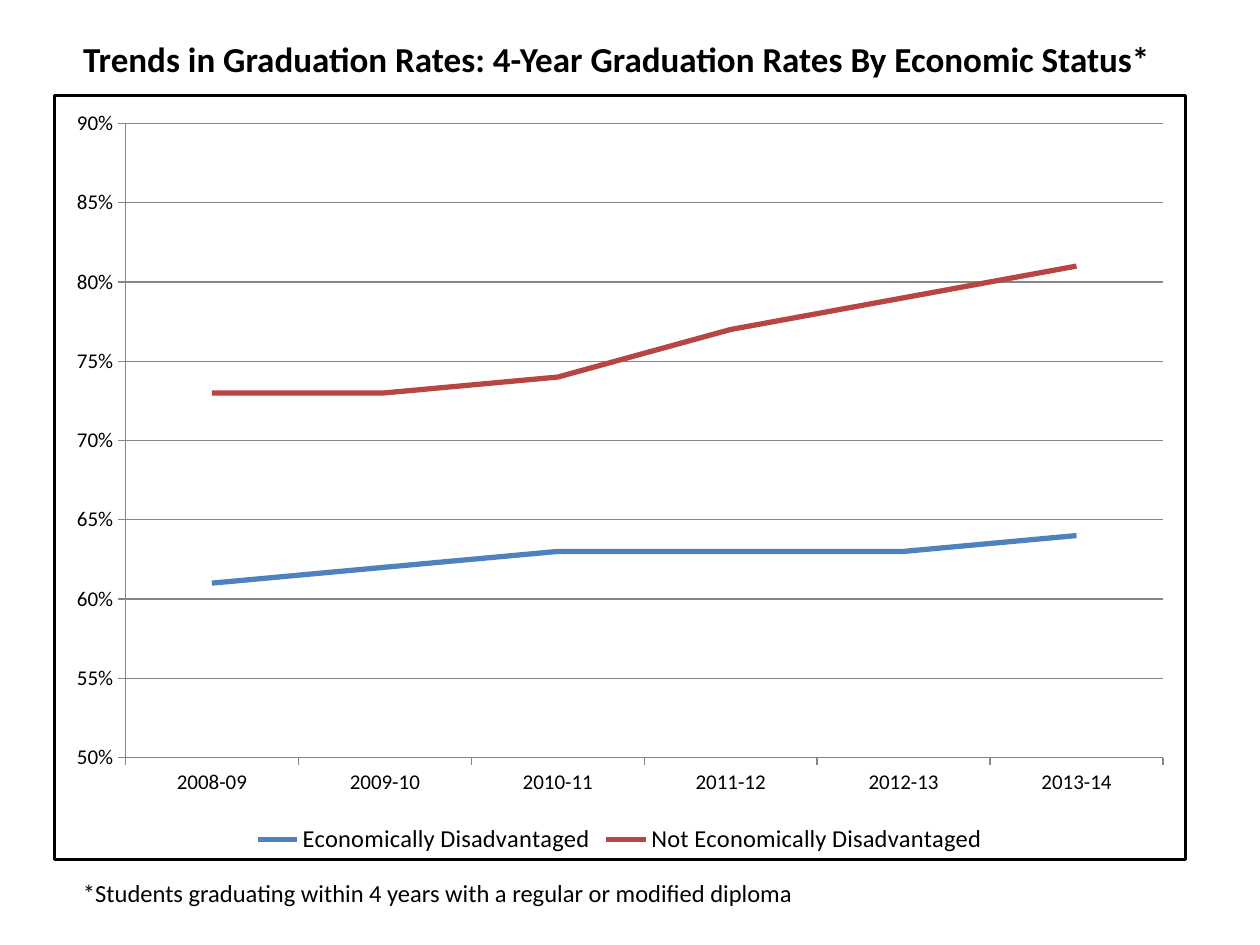
from lxml import etree
from pptx import Presentation
from pptx.chart.data import CategoryChartData
from pptx.dml.color import RGBColor
from pptx.enum.chart import XL_CHART_TYPE as CT, XL_LEGEND_POSITION as LP, XL_TICK_MARK as TM
from pptx.enum.text import MSO_ANCHOR, PP_ALIGN
from pptx.oxml import parse_xml
from pptx.oxml.ns import nsdecls, qn
from pptx.util import Inches, Pt

FONT, BLACK, GREY = "Calibri", "000000", "868686"
TITLE = "Trends in Graduation Rates: 4-Year Graduation Rates By Economic Status*"
FOOTNOTE = "*Students graduating within 4 years with a regular or modified diploma"
YEARS = ["2008-09", "2009-10", "2010-11", "2011-12", "2012-13", "2013-14"]
SERIES = [
    ("Economically Disadvantaged", "4F81BD", (0.61, 0.62, 0.63, 0.63, 0.63, 0.64)),
    ("Not Economically Disadvantaged", "B84542", (0.73, 0.73, 0.74, 0.77, 0.79, 0.81)),
]
TITLE_BOX = (0.56, 0.25, 8.94, 0.44)
CHART_BOX = (0.42, 0.75, 9, 6.08)
NOTE_BOX = (0.56, 6.92, 5.89, 0.34)


def rgb(value):
    """Turn a hex string into a colour."""
    return RGBColor.from_string(value)


def box(values):
    """Turn a box in inches into lengths."""
    return [Inches(v) for v in values]


def style_font(font, size, bold=False):
    """Apply the slide's typeface in black."""
    font.name, font.size, font.bold = FONT, Pt(size), bold
    font.color.rgb = rgb(BLACK)


def style_line(line, color, width):
    """Set a line's colour and width in points."""
    line.color.rgb, line.width = rgb(color), Pt(width)


def write(sp, text, size, bold=False, wrap=True):
    """Fill a shape with one left-aligned paragraph."""
    tf = sp.text_frame
    tf.text, tf.word_wrap, tf.vertical_anchor = text, wrap, MSO_ANCHOR.TOP
    p = tf.paragraphs[0]
    p.alignment = PP_ALIGN.LEFT
    style_font(p.runs[0].font, size, bold)


def add_border(chart, color, width):
    """Outline the whole chart area."""
    sp_pr = parse_xml(f'<c:spPr {nsdecls("c", "a")}/>')
    ln = etree.SubElement(sp_pr, qn("a:ln"), w=str(Pt(width)))
    fill = etree.SubElement(ln, qn("a:solidFill"))
    etree.SubElement(fill, qn("a:srgbClr"), val=color)
    chart.element.find(qn("c:chart")).addnext(sp_pr)


def add_rates(s):
    """Add the line chart of graduation rates."""
    data = CategoryChartData(number_format="0%")
    data.categories = YEARS
    for name, _, rates in SERIES:
        data.add_series(name, rates)
    chart = s.shapes.add_chart(CT.LINE, *box(CHART_BOX), data).chart
    style_font(chart.font, 10)
    chart.has_title = False
    chart.has_legend = True
    chart.legend.position, chart.legend.include_in_layout = LP.BOTTOM, False
    style_font(chart.legend.font, 14)
    for axis in (chart.category_axis, chart.value_axis):
        axis.major_tick_mark, axis.minor_tick_mark = TM.OUTSIDE, TM.NONE
        style_font(axis.tick_labels.font, 12)
        style_line(axis.format.line, GREY, 0.75)
    axis = chart.value_axis
    axis.minimum_scale, axis.maximum_scale, axis.major_unit = 0.5, 0.9, 0.05
    axis.tick_labels.number_format = "0%"
    axis.tick_labels.number_format_is_linked = False
    axis.has_major_gridlines = True
    style_line(axis.major_gridlines.format.line, GREY, 0.75)
    chart.plots[0].vary_by_categories = False
    for series, (_, color, _) in zip(chart.plots[0].series, SERIES):
        series.smooth = False
        style_line(series.format.line, color, 3)
    add_border(chart, BLACK, 1.5)


def main():
    """Build and save the slide."""
    prs = Presentation()
    prs.slide_width, prs.slide_height = Inches(10), Inches(7.5)
    s = prs.slides.add_slide(prs.slide_layouts[5])
    title = s.shapes.title
    title.left, title.top, title.width, title.height = box(TITLE_BOX)
    write(title, TITLE, 20, bold=True)
    write(s.shapes.add_textbox(*box(NOTE_BOX)), FOOTNOTE, 14, wrap=False)
    add_rates(s)
    prs.save("out.pptx")


if __name__ == "__main__":
    main()
